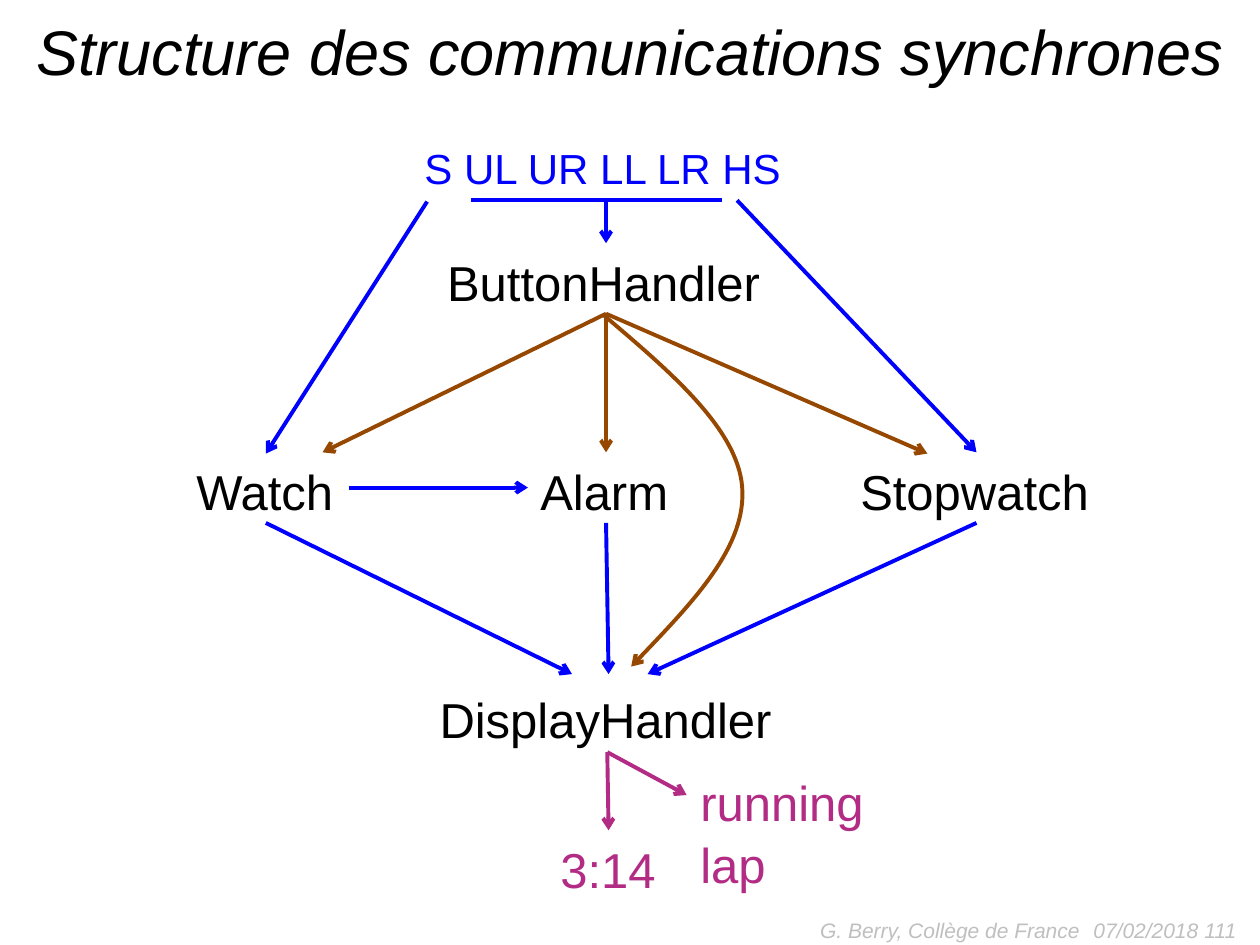
from collections import namedtuple
from dataclasses import dataclass

from lxml.etree import SubElement
from pptx import Presentation
from pptx.dml.color import RGBColor
from pptx.enum.shapes import MSO_CONNECTOR
from pptx.enum.text import MSO_ANCHOR, MSO_AUTO_SIZE, PP_ALIGN
from pptx.oxml.ns import qn
from pptx.util import Inches, Pt

Box = namedtuple("Box", "left top width height")


@dataclass(frozen=True)
class Theme:
    face: str = "Arial"
    ink: RGBColor = RGBColor(0, 0, 0)
    muted: RGBColor = RGBColor(0xBF, 0xBF, 0xBF)
    signal: RGBColor = RGBColor(0, 0, 0xFF)
    command: RGBColor = RGBColor(0x96, 0x47, 0)
    output: RGBColor = RGBColor(0xB2, 0x2C, 0x85)
    title: int = 36
    module: int = 28
    inputs: int = 24
    footer: int = 12
    stroke: float = 2.25


THEME = Theme()


def apply(target, formats):
    for name, value in formats.items():
        setattr(target, name, value)


def style(paragraph, size, color, italic=False, **formats):
    apply(paragraph, formats)
    apply(paragraph.font, {"name": THEME.face, "size": Pt(size), "italic": italic})
    paragraph.font.color.rgb = color


def place(box, x, y):
    return Inches(box.left + x), Inches(box.top + y)


def add_label(shapes, box, x, y, width, height, text, size, color):
    label = shapes.add_textbox(*place(box, x, y), Inches(width), Inches(height))
    frame = label.text_frame
    frame.text = text
    apply(frame, {"word_wrap": False, "auto_size": MSO_AUTO_SIZE.SHAPE_TO_FIT_TEXT})
    for paragraph in frame.paragraphs:
        style(paragraph, size, color, line_spacing=1.05)


def stroke(shape, color, arrow=True):
    shape.line.color.rgb = color
    shape.line.width = Pt(THEME.stroke)
    if arrow:
        outline = shape._element.spPr.find(qn("a:ln"))
        SubElement(outline, qn("a:tailEnd"), type="arrow")


def add_link(shapes, box, start, end, color, arrow=True):
    link = shapes.add_connector(
        MSO_CONNECTOR.STRAIGHT, *place(box, *start), *place(box, *end)
    )
    stroke(link, color, arrow)
    SubElement(link._element.spPr, qn("a:effectLst"))


def add_curve(shapes, box, start, controls, color):
    builder = shapes.build_freeform(*place(box, *start), scale=1.0)
    builder.add_line_segments([place(box, *point) for point in controls], close=False)
    curve = builder.convert_to_shape()
    segments = list(curve._element.iter(qn("a:lnTo")))
    outline = segments[0].getparent()
    for first in range(0, len(segments), 3):
        bezier = SubElement(outline, qn("a:cubicBezTo"))
        for segment in segments[first:first + 3]:
            bezier.append(segment[0])
            outline.remove(segment)
    curve.fill.background()
    curve.shadow.inherit = False
    stroke(curve, color)


def draw_title(slide, box):
    title = slide.shapes.title
    apply(title, {name: Inches(value) for name, value in box._asdict().items()})
    frame = title.text_frame
    frame.text = "Structure des communications synchrones"
    apply(frame, {
        "vertical_anchor": MSO_ANCHOR.TOP,
        "auto_size": MSO_AUTO_SIZE.NONE,
        "word_wrap": True,
    })
    style(frame.paragraphs[0], THEME.title, THEME.ink, True, alignment=PP_ALIGN.CENTER)


def draw_footer(slide, box):
    entries = [
        (3.08, 2.33, "07/02/2018", PP_ALIGN.LEFT),
        (2.08, 2.33, "111", PP_ALIGN.RIGHT),
        (0, 3.17, "G. Berry, Collège de France", PP_ALIGN.RIGHT),
    ]
    for x, width, text, alignment in entries:
        entry = slide.shapes.add_textbox(
            *place(box, x, 0), Inches(width), Inches(box.height)
        )
        frame = entry.text_frame
        frame.text = text
        apply(frame, {"word_wrap": True, "vertical_anchor": MSO_ANCHOR.MIDDLE})
        style(frame.paragraphs[0], THEME.footer, THEME.muted, True, alignment=alignment)


def draw_modules(slide, box):
    modules = slide.shapes.add_group_shape().shapes
    for x, y, width, name in [
        (1.99, 0, 2.72, "ButtonHandler"),
        (0, 1.66, 1.32, "Watch"),
        (2.73, 1.66, 1.23, "Alarm"),
        (5.27, 1.66, 2.04, "Stopwatch"),
        (1.93, 3.47, 2.87, "DisplayHandler"),
    ]:
        add_label(modules, box, x, y, width, 0.56, name, THEME.module, THEME.ink)


def draw_commands(slide, box):
    commands = slide.shapes.add_group_shape().shapes
    source = (2.25, 0)
    for target in [(0, 1.1), (2.25, 1.1), (4.8, 1.11)]:
        add_link(commands, box, source, target, THEME.command)


def draw_inputs(slide, box):
    add_label(slide.shapes, box, 1.16, 0, 3.08, 0.53, "S UL UR LL LR HS",
              THEME.inputs, THEME.signal)
    buttons = slide.shapes.add_group_shape().shapes
    add_link(buttons, box, (1.63, 0.53), (3.62, 0.53), THEME.signal, arrow=False)
    add_link(buttons, box, (2.7, 0.53), (2.7, 0.87), THEME.signal)
    for start, end in [
        ((1.28, 0.54), (0, 2.54)),
        ((3.74, 0.53), (5.64, 2.53)),
        ((0.66, 2.81), (2.08, 2.81)),
    ]:
        add_link(slide.shapes, box, start, end, THEME.signal)


def draw_outputs(slide, box):
    outputs = slide.shapes.add_group_shape().shapes
    for x, y, width, height, text in [
        (0, 0.62, 0.97, 0.56, "3:14"),
        (1.11, 0.09, 1.52, 1.09, "running\nlap"),
    ]:
        add_label(outputs, box, x, y, width, height, text, THEME.module, THEME.output)
    for target in [(0.48, 0.62), (1.1, 0.34)]:
        add_link(outputs, box, (0.47, 0), target, THEME.output)


def draw_display_links(slide, box):
    links = slide.shapes.add_group_shape().shapes
    for start_x, end_x in [(2.7, 2.72), (5.64, 3.03), (0, 2.43)]:
        add_link(links, box, (start_x, 1.65), (end_x, 2.85), THEME.signal)
    add_curve(links, box, (2.68, 0), [
        (3.21, 0.45), (3.74, 0.9), (3.78, 1.36),
        (3.82, 1.83), (3.36, 2.31), (2.9, 2.79),
    ], THEME.command)


def main():
    deck = Presentation()
    apply(deck, {"slide_width": Inches(10), "slide_height": Inches(7.5)})
    slide = deck.slides.add_slide(deck.slide_layouts.get_by_name("Title Only"))
    for draw, box in [
        (draw_footer, Box(5.5, 7.18, 5.41, 0.4)),
        (draw_title, Box(0, 0.05, 10, 1.31)),
        (draw_modules, Box(1.46, 1.93, 7.31, 4.03)),
        (draw_commands, Box(2.56, 2.49, 4.8, 1.11)),
        (draw_inputs, Box(2.11, 1.06, 5.64, 2.81)),
        (draw_outputs, Box(4.35, 5.97, 2.63, 1.18)),
        (draw_display_links, Box(2.11, 2.5, 5.64, 2.85)),
    ]:
        draw(slide, box)
    deck.save("out.pptx")


if __name__ == "__main__":
    main()
